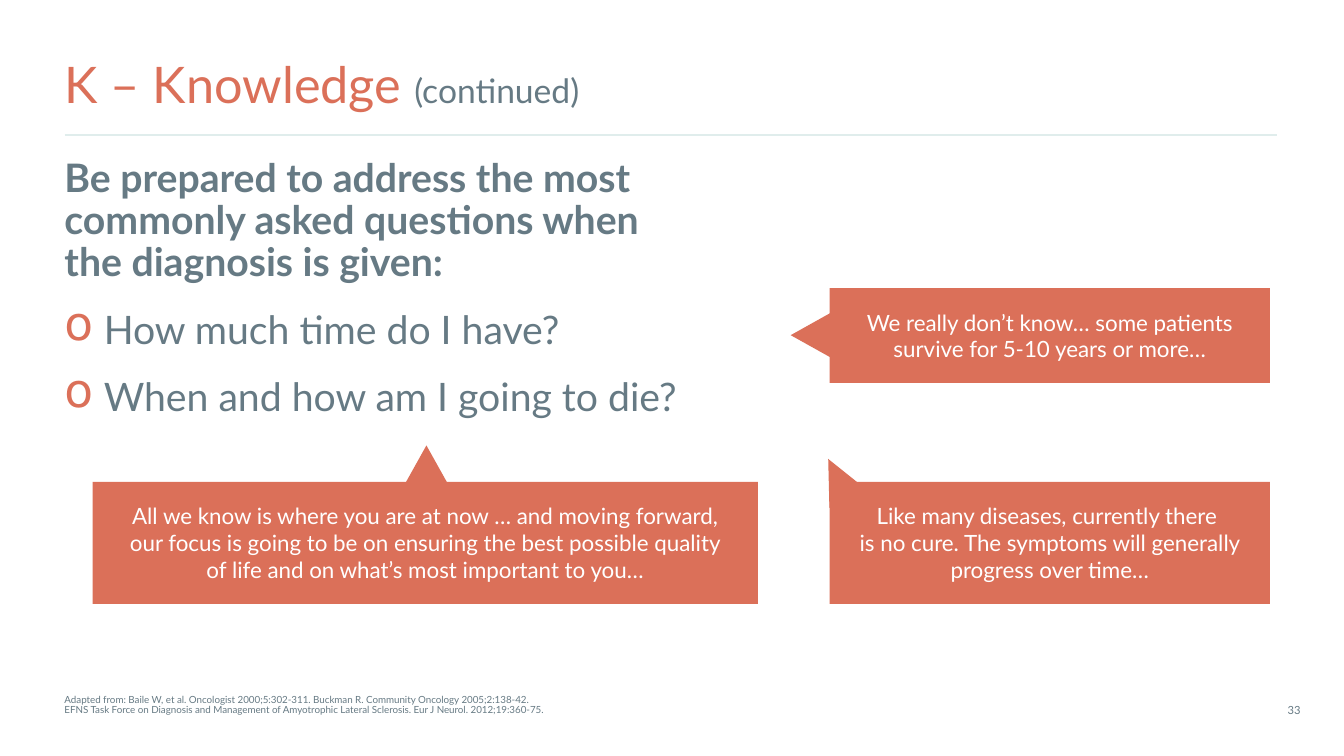
from dataclasses import dataclass

from lxml.etree import SubElement
from pptx import Presentation
from pptx.dml.color import RGBColor
from pptx.enum.shapes import MSO_CONNECTOR as Connector, MSO_SHAPE as Preset
from pptx.enum.text import MSO_ANCHOR as Anchor, PP_ALIGN as Align
from pptx.oxml.ns import qn
from pptx.util import Pt

TITLE = [("K – Knowledge ", "accent", 36), ("(continued)", "slate", 24)]
INTRO = "Be prepared to address the most commonly asked questions when \nthe diagnosis is given:"
QUESTIONS = ["How much time do I have?", "When and how am I going to die?"]
SOURCES = [
    "Adapted from: Baile W, et al. Oncologist 2000;5:302-311. Buckman R. Community Oncology 2005;2:138-42.",
    "EFNS Task Force on Diagnosis and Management of Amyotrophic Lateral Sclerosis. Eur J Neurol. 2012;19:360-75.",
]
PAGE_NUMBER = "33"
# Boxes are left, top, width, height in points
ANSWERS = [
    dict(text="We really don’t know… some patients survive for 5-10 years or more…",
         box=(592.6, 205.9, 314.6, 67.7), side_inset=14.4,
         pointer=(563, 223.9, 34.6, 31), rotation=270),
    dict(text="All we know is where you are at now … and moving forward, our focus is going "
              "to be on ensuring the best possible quality of life and on what’s most important to you…",
         box=(66.2, 344.2, 475.2, 87.1), side_inset=22.3,
         pointer=(287.3, 318.2, 34.6, 31), rotation=0),
    dict(text="Like many diseases, currently there \nis no cure. The symptoms will generally "
              "progress over time…",
         box=(592.6, 344.2, 314.6, 87.1), side_inset=14.4,
         pointer=(583.9, 326.2, 29.5, 31.7), rotation=333.7),
]
LEFT, CONTENT_WIDTH, RULE_TOP = 46.1, 866.2, 96.5


@dataclass(frozen=True)
class Theme:
    font: str = "Lato"
    accent: str = "DB7059"
    slate: str = "667A84"
    white: str = "FFFFFF"
    rule: str = "E0EDEC"
    body_size: int = 28
    answer_size: int = 16
    source_size: int = 7
    number_size: int = 8


THEME = Theme()


def color(name):
    return RGBColor.from_string(getattr(THEME, name))


def points(values):
    return [Pt(value) for value in values]


def prepare_frame(shape, anchor=Anchor.TOP, side=0, vertical=0, wrap=True):
    frame = shape.text_frame
    frame.word_wrap = wrap
    frame.vertical_anchor = anchor
    frame.margin_left = frame.margin_right = Pt(side)
    frame.margin_top = frame.margin_bottom = Pt(vertical)
    return frame


def add_bullet(paragraph):
    properties = paragraph._p.get_or_add_pPr()
    properties.set("marL", str(Pt(28.1)))
    properties.set("indent", str(-Pt(28.1)))
    bullet_color = SubElement(properties, qn("a:buClr"))
    SubElement(bullet_color, qn("a:srgbClr"), val=THEME.accent)
    SubElement(properties, qn("a:buSzPct"), val="120000")
    SubElement(properties, qn("a:buChar"), char="o")


def write(frame, text, size, ink="slate", bold=False, align=Align.LEFT,
          line_spacing=None, before=0, after=0, bullet=False, same_paragraph=False):
    """Add text as a paragraph, or as a run of the last one; newlines become line breaks."""
    paragraph = frame.paragraphs[-1]
    if paragraph.runs and not same_paragraph:
        paragraph = frame.add_paragraph()
    paragraph.alignment = align
    paragraph.line_spacing = line_spacing
    paragraph.space_before, paragraph.space_after = Pt(before), Pt(after)
    if bullet:
        add_bullet(paragraph)
    for index, line in enumerate(text.split("\n")):
        if index:
            paragraph.add_line_break()
        run = paragraph.add_run()
        run.text = line
        run.font.name, run.font.size, run.font.bold = THEME.font, Pt(size), bold
        run.font.color.rgb = color(ink)


def add_filled(slide, preset, box, rotation=0):
    shape = slide.shapes.add_shape(preset, *points(box))
    shape.rotation = rotation
    shape.shadow.inherit = False
    shape.fill.solid()
    shape.fill.fore_color.rgb = color("accent")
    shape.line.fill.background()
    return shape


def add_title(slide):
    title = slide.shapes.title
    title.left, title.top, title.width, title.height = points((LEFT, 42.5, CONTENT_WIDTH, 39.6))
    frame = prepare_frame(title, Anchor.MIDDLE)
    for text, ink, size in TITLE:
        write(frame, text, size, ink, line_spacing=0.9, same_paragraph=True)


def add_rule(slide):
    rule = slide.shapes.add_connector(
        Connector.STRAIGHT, *points((LEFT, RULE_TOP, LEFT + CONTENT_WIDTH, RULE_TOP)))
    rule.line.color.rgb = color("rule")
    rule.line.width = Pt(1.5)
    SubElement(rule._element.spPr, qn("a:effectLst"))


def add_questions(slide):
    frame = prepare_frame(slide.shapes.add_textbox(*points((LEFT, 113, 463.7, 189.4))))
    write(frame, INTRO, THEME.body_size, bold=True, line_spacing=0.9, after=12)
    for question in QUESTIONS:
        write(frame, question, THEME.body_size, line_spacing=0.9, before=6, after=12, bullet=True)


def add_answer(slide, text, box, side_inset, pointer, rotation):
    rectangle = add_filled(slide, Preset.RECTANGLE, box)
    frame = prepare_frame(rectangle, Anchor.MIDDLE, side=side_inset, vertical=14.4)
    write(frame, text, THEME.answer_size, "white", align=Align.CENTER)
    add_filled(slide, Preset.ISOSCELES_TRIANGLE, pointer, rotation)


def add_footer(slide):
    frame = prepare_frame(slide.shapes.add_textbox(*points((LEFT, 496.1, 801.4, 15.1))), Anchor.BOTTOM)
    for source in SOURCES:
        write(frame, source, THEME.source_size, line_spacing=0.9)
    number = slide.shapes.add_textbox(*points((912.2, 499, 24.5, 17.3)))
    frame = prepare_frame(number, side=7.2, vertical=3.6, wrap=False)
    write(frame, PAGE_NUMBER, THEME.number_size, align=Align.CENTER)


def main():
    presentation = Presentation()
    presentation.slide_width, presentation.slide_height = Pt(960), Pt(540)
    slide = presentation.slides.add_slide(presentation.slide_layouts[5])
    add_title(slide)
    add_rule(slide)
    add_questions(slide)
    for answer in ANSWERS:
        add_answer(slide, **answer)
    add_footer(slide)
    presentation.save("out.pptx")


if __name__ == "__main__":
    main()
